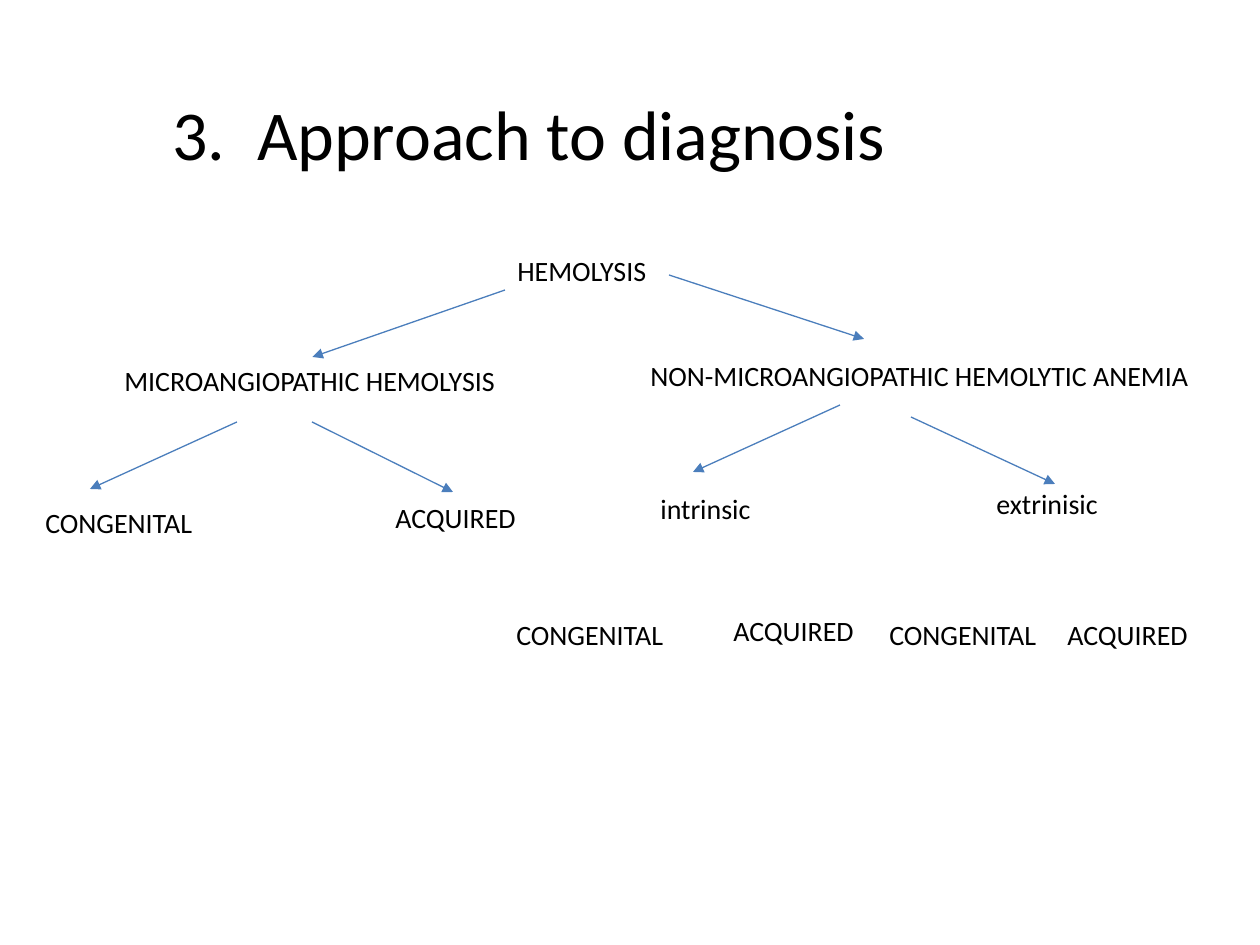
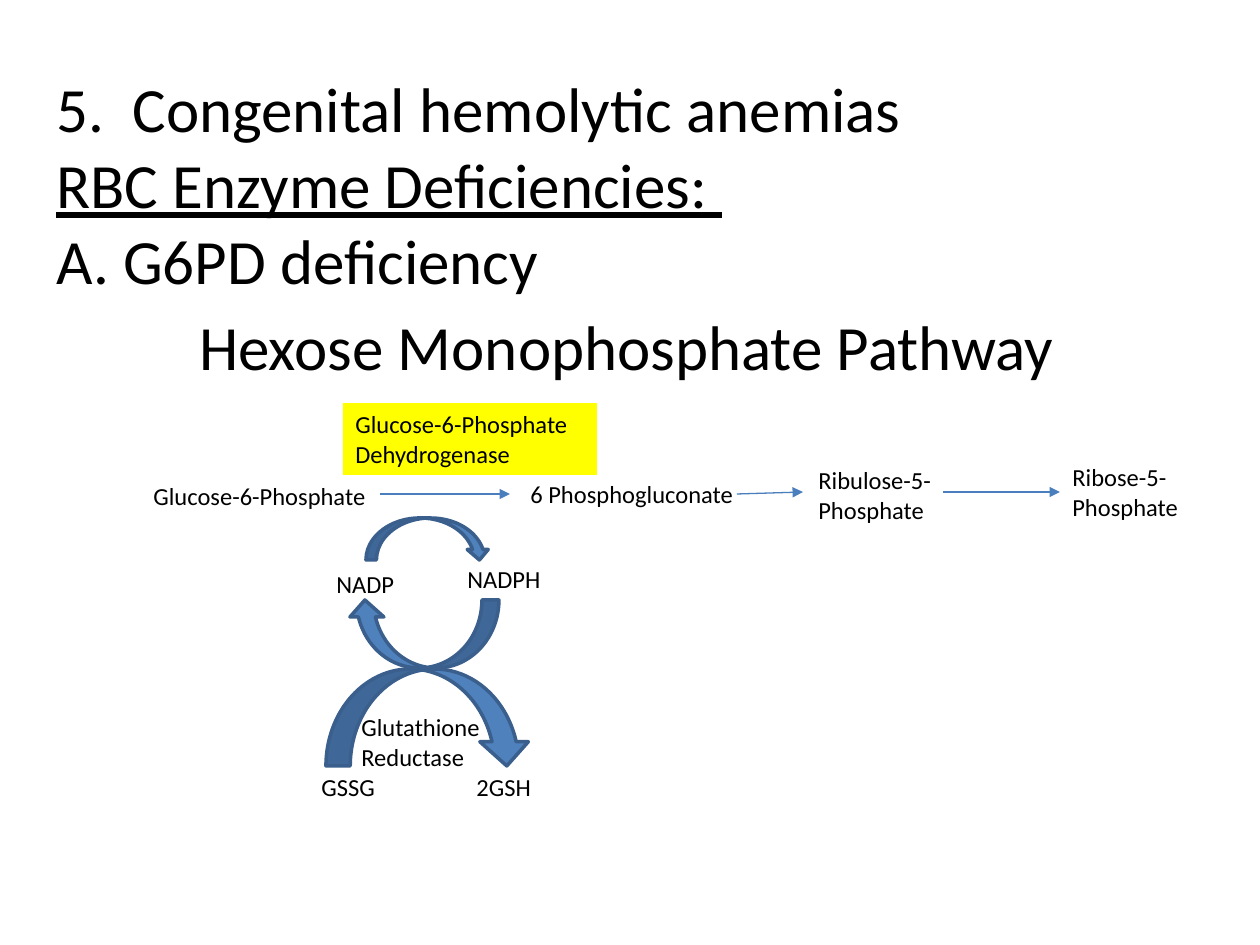
from lxml.etree import SubElement
from pptx import Presentation
from pptx.dml.color import RGBColor
from pptx.enum.shapes import MSO_CONNECTOR, MSO_SHAPE
from pptx.enum.text import MSO_ANCHOR, MSO_AUTO_SIZE
from pptx.oxml.ns import qn
from pptx.util import Emu, Pt

FONT = "Calibri"
BLACK = RGBColor(0x00, 0x00, 0x00)
YELLOW = RGBColor(0xFF, 0xFF, 0x00)
ARROW_LINE = RGBColor(0x4B, 0x7E, 0xBC)
CURVE_FILL = RGBColor(0x4F, 0x81, 0xBD)
CURVE_EDGE = RGBColor(0x3A, 0x5F, 0x8C)

PX_PER_INCH = 126
TREE_SIZE, PATHWAY_SIZE = 16, 14
TREE_HEIGHT, ONE_LINE, TWO_LINES = 47, 43, 72


def px(length):
    return Emu(round(length * 914400 / PX_PER_INCH))


def style(paragraph, size, underline=False):
    font = paragraph.font
    font.name, font.size, font.color.rgb = FONT, Pt(size), BLACK
    font.underline = underline


def label(slide, text, left, top, width, height, size, fill=None):
    box = slide.shapes.add_textbox(px(left), px(top), px(width), px(height))
    frame = box.text_frame
    frame.word_wrap = True
    frame.auto_size = MSO_AUTO_SIZE.SHAPE_TO_FIT_TEXT
    frame.text = text
    for paragraph in frame.paragraphs:
        style(paragraph, size)
    if fill is not None:
        box.fill.solid()
        box.fill.fore_color.rgb = fill
    return box


def arrow(slide, x1, y1, x2, y2):
    connector = slide.shapes.add_connector(
        MSO_CONNECTOR.STRAIGHT, px(x1), px(y1), px(x2), px(y2))
    connector.line.color.rgb = ARROW_LINE
    connector.line.width = Pt(0.75)
    SubElement(connector.line._get_or_add_ln(), qn("a:tailEnd"), type="triangle")
    SubElement(connector._element.spPr, qn("a:effectLst"))
    return connector


def curved_arrow(slide, left, top, width, height, flip):
    curve = slide.shapes.add_shape(
        MSO_SHAPE.CURVED_UP_ARROW, px(left), px(top), px(width), px(height))
    curve.shadow.inherit = False
    curve.fill.solid()
    curve.fill.fore_color.rgb = CURVE_FILL
    curve.line.color.rgb = CURVE_EDGE
    curve.line.width = Pt(2)
    curve._element.spPr.xfrm.set(flip, "1")


def heading(slide):
    """Outline heading, with the pathway name indented below it."""
    box = slide.shapes.add_textbox(px(44), px(158), px(1086), px(137))
    frame = box.text_frame
    frame.word_wrap = True
    frame.vertical_anchor = MSO_ANCHOR.MIDDLE
    frame.text = ("5.  Congenital hemolytic anemias\nRBC Enzyme Deficiencies: \n"
                  "A. G6PD deficiency\nHexose Monophosphate Pathway")
    for paragraph in frame.paragraphs:
        style(paragraph, 36, underline=paragraph.text.startswith("RBC"))
    pathway_name = frame.paragraphs[-1]
    pathway_name.space_before = Pt(6)
    pathway_name._p.get_or_add_pPr().set("marL", str(px(143)))


def build_diagnosis(slide):
    label(slide, "3.  Approach to diagnosis", 160, 84, 774, 97, 40)

    # Types of hemolysis
    def node(text, left, top, width):
        return label(slide, text, left, top, width, TREE_HEIGHT, TREE_SIZE)

    node("HEMOLYSIS", 505, 247, 188)
    microangiopathic = node("MICROANGIOPATHIC HEMOLYSIS", 112, 357, 401)
    node("NON-MICROANGIOPATHIC HEMOLYTIC ANEMIA", 638, 352, 571)
    node("intrinsic", 648, 485, 183)
    node("extrinisic", 984, 480, 142)

    # Origins
    for left, top in ((33, 499), (504, 611), (877, 611)):
        node("CONGENITAL", left, top, 174)
    for left, top in ((383, 494), (721, 607), (1055, 611)):
        node("ACQUIRED", left, top, 148)

    # Branches
    arrow(slide, 505, 290, 312, 357).end_connect(microangiopathic, 0)
    for ends in ((669, 275, 864, 339),
                 (237, 422, 90, 489), (312, 422, 453, 492),
                 (911, 417, 1055, 484), (840, 405, 693, 472)):
        arrow(slide, *ends)


def build_g6pd(slide):
    heading(slide)

    def molecule(text, left, top, width, height=ONE_LINE, fill=None):
        return label(slide, text, left, top, width, height, PATHWAY_SIZE, fill)

    # Pathway
    molecule("Glucose-6-Phosphate", 141, 475, 271)
    molecule("6 Phosphogluconate", 518, 473, 248)
    molecule("Ribulose-5-Phosphate", 806, 459, 175, TWO_LINES)
    ribose = molecule("Ribose-5-Phosphate", 1060, 456, 175, TWO_LINES)
    arrow(slide, 380, 494, 510, 494)
    arrow(slide, 737, 494, 803, 492)
    arrow(slide, 943, 492, 1057, 492).end_connect(ribose, 1)

    # Coupled cycles
    curved_arrow(slide, 366, 518, 124, 42, "flipV")
    curved_arrow(slide, 348, 600, 151, 68, "flipH")
    curved_arrow(slide, 326, 669, 205, 97, "flipV")
    molecule("NADP", 324, 563, 115)
    molecule("NADPH", 455, 558, 115)
    molecule("GSSG", 309, 766, 97)
    molecule("2GSH", 464, 766, 97)

    # Enzymes: the reductase sits low, where the arch above it is widest
    molecule("Glutathione Reductase", 349, 706, 175, TWO_LINES)
    molecule("Glucose-6-Phosphate\nDehydrogenase", 343, 403, 254, TWO_LINES, YELLOW)


def main():
    deck = Presentation()
    deck.slide_width, deck.slide_height = px(1260), px(945)
    blank = deck.slide_layouts[6]
    for build in (build_diagnosis, build_g6pd):
        build(deck.slides.add_slide(blank))
    deck.save("out.pptx")


if __name__ == "__main__":
    main()
